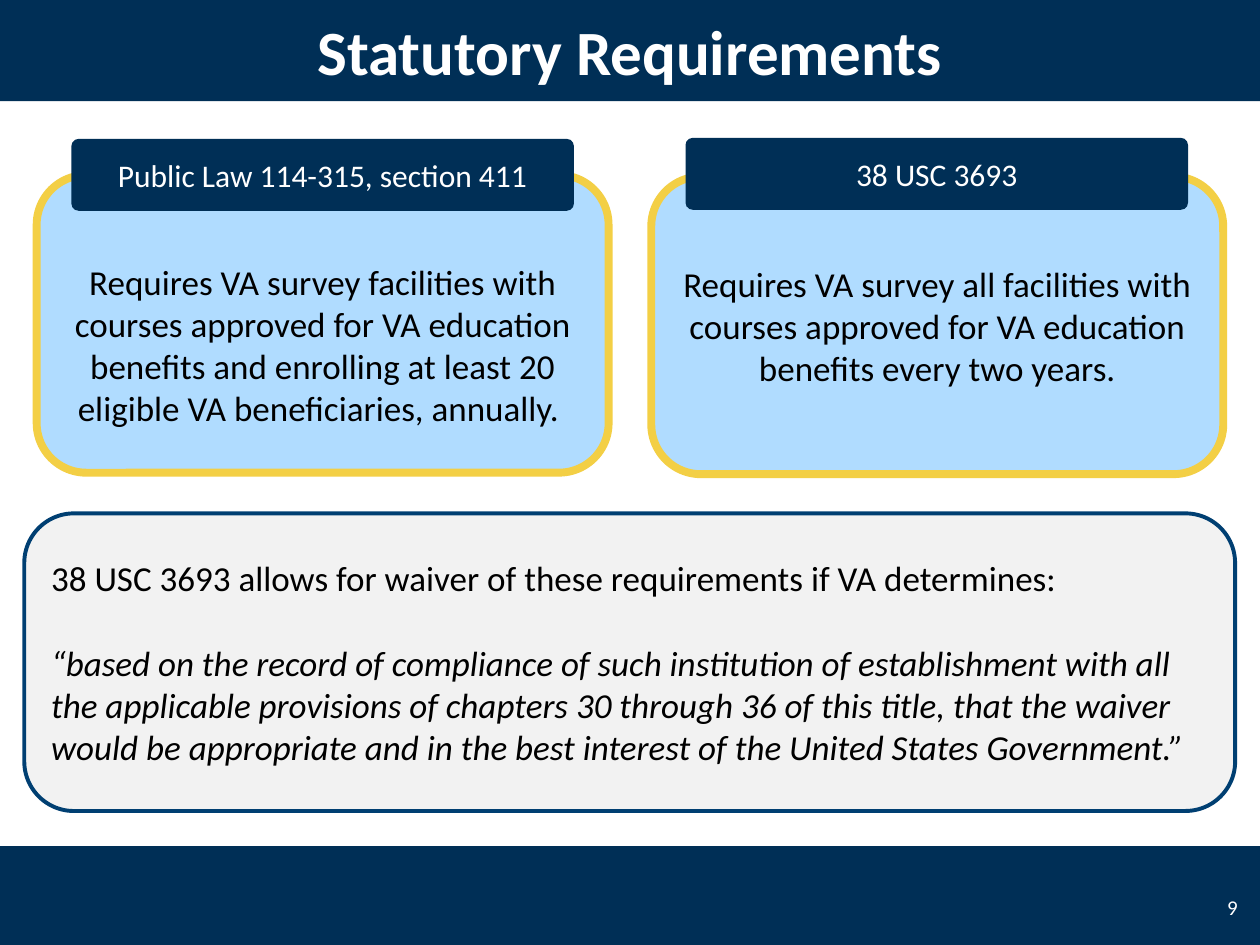
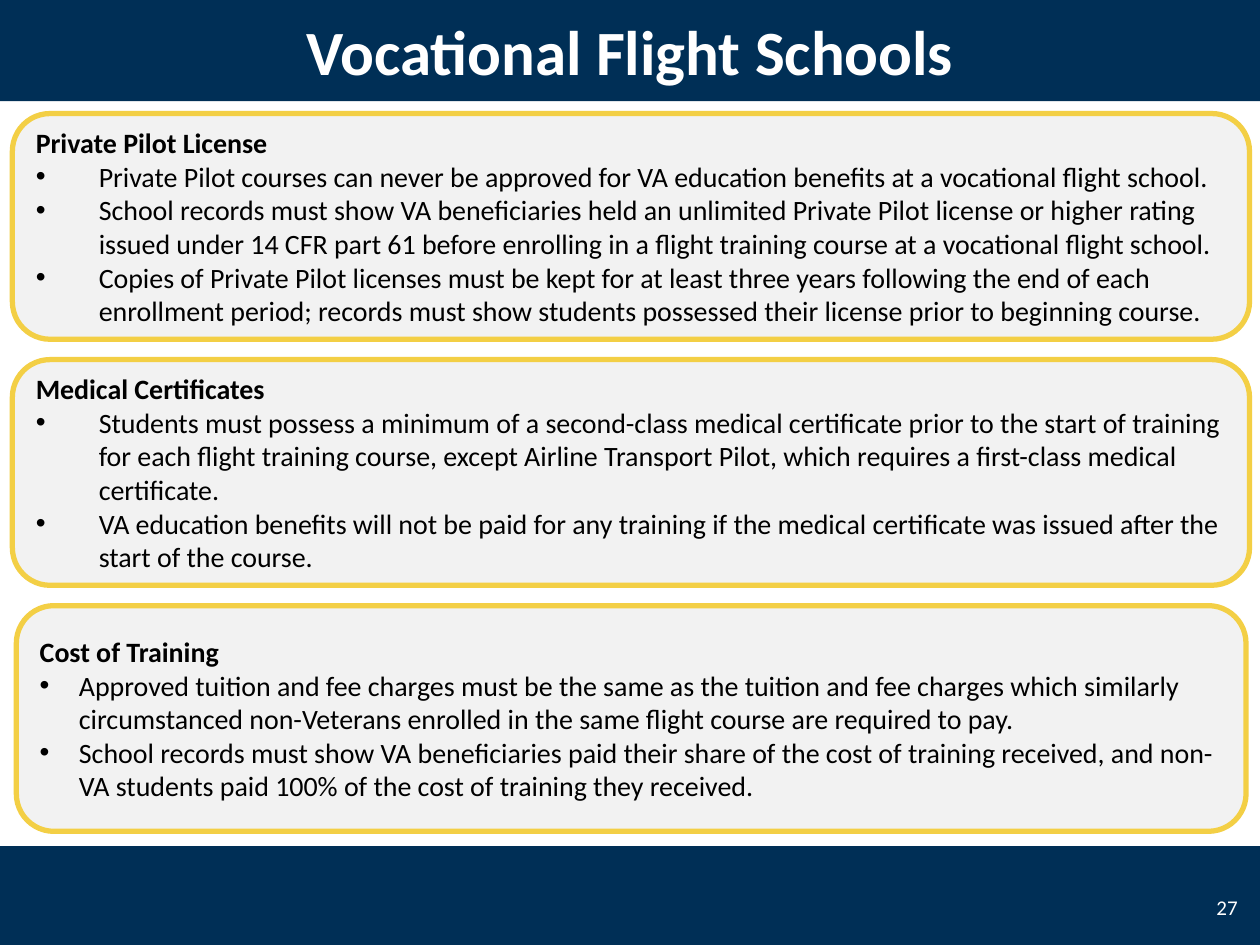
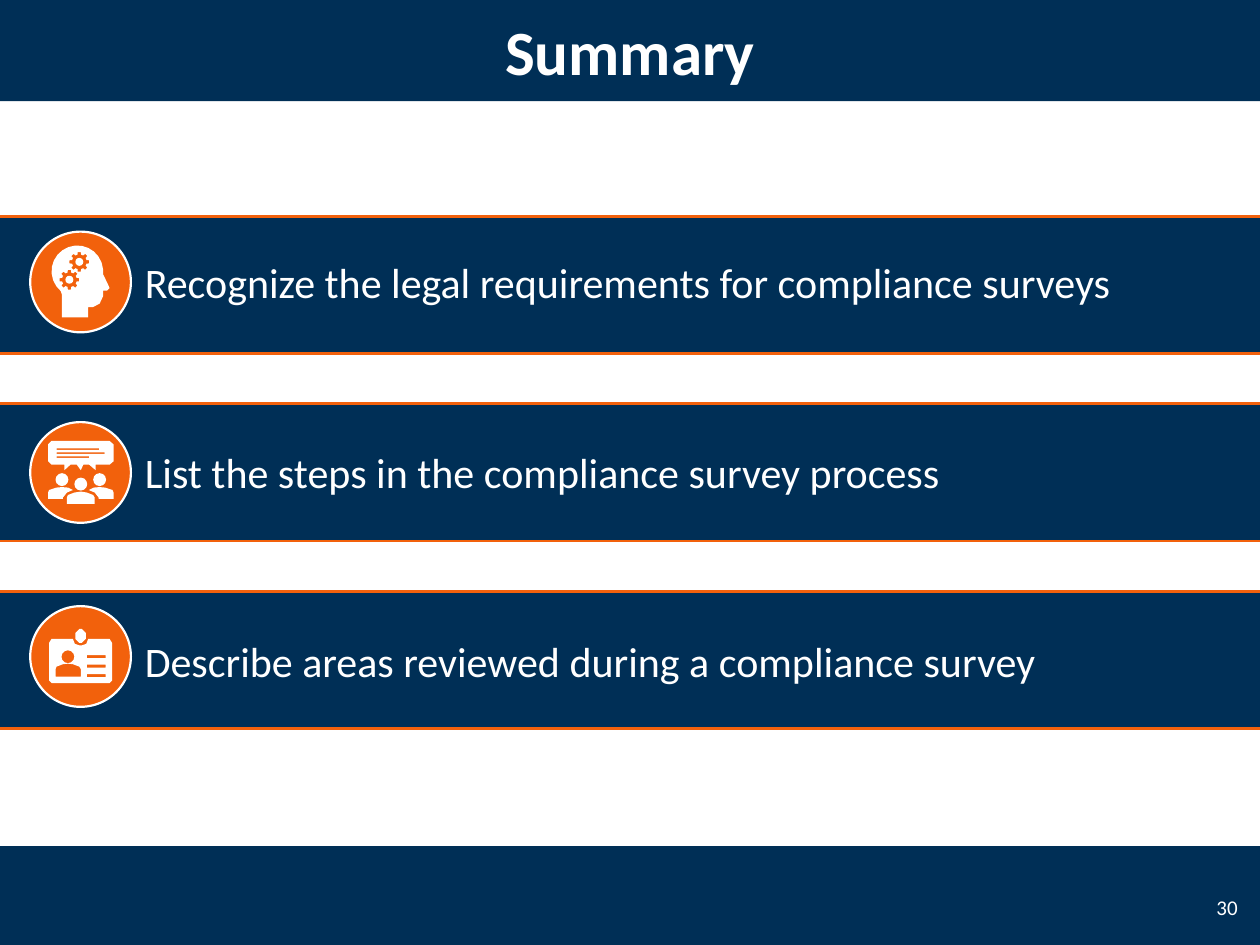
from dataclasses import dataclass
from math import cos, radians, sin
from typing import Any

from lxml.etree import SubElement
from pptx import Presentation
from pptx.dml.color import RGBColor
from pptx.enum.shapes import MSO_SHAPE
from pptx.enum.text import MSO_ANCHOR, PP_ALIGN
from pptx.oxml.ns import qn
from pptx.util import Cm, Pt

NAVY, BLUE, SKY = "002F56", "003F72", "B0DCFF"
GOLD, ORANGE = "F3CF45", "F2610C"
WHITE, BLACK, GRAY = "FFFFFF", "000000", "F2F2F2"
WIDE, HIGH = 25.4, 19.05
LEFT, DISC = 0.61, 2.03

RECT, ROUND = MSO_SHAPE.RECTANGLE, MSO_SHAPE.ROUNDED_RECTANGLE
OVAL = MSO_SHAPE.OVAL

BODY = {"name": "Calibri", "size": Pt(20), "bold": False, "italic": False}
HEAD = BODY | {"size": Pt(36), "bold": True}
LABEL = BODY | {"size": Pt(18)}
NOTE = BODY | {"size": Pt(16)}
POINT = BODY | {"size": Pt(24)}
PAGE = BODY | {"size": Pt(12)}

Path = list[tuple[float, float]]


@dataclass
class Box:
    x: float
    y: float
    w: float
    h: float

    def lengths(self) -> tuple:
        return Cm(self.x), Cm(self.y), Cm(self.w), Cm(self.h)


@dataclass
class Look:
    fill: str
    line: str | None = None
    width: float = 0
    kind: Any = RECT
    adj: float | None = None


@dataclass
class Para:
    text: str
    font: dict
    color: str = BLACK
    align: Any = PP_ALIGN.LEFT
    before: float = 0
    hang: float = 0


@dataclass
class Card:
    box: Box
    tab: Box
    label: str
    text: str
    drop: float


@dataclass
class Panel:
    x: float
    w: float
    hang: float
    head: str
    items: list[str]


@dataclass
class Goal:
    text: str
    width: float
    disc: float
    icon: list[Path]


def tint(code: str) -> RGBColor:
    return RGBColor.from_string(code)


def apply(target: Any, values: dict) -> None:
    for key, value in values.items():
        setattr(target, key, value)


def paint(shape: Any, look: Look) -> None:
    shape.shadow.inherit = False
    shape.fill.solid()
    shape.fill.fore_color.rgb = tint(look.fill)
    if look.line:
        shape.line.color.rgb = tint(look.line)
        shape.line.width = Pt(look.width)
    else:
        shape.line.fill.background()


def draw(slide: Any, box: Box, look: Look) -> Any:
    shape = slide.shapes.add_shape(look.kind, *box.lengths())
    paint(shape, look)
    if look.adj is not None:
        shape.adjustments[0] = look.adj
    return shape


def trace(slide: Any, x: float, y: float, icon: list[Path]) -> None:
    loops = [[(Cm(x + dx), Cm(y + dy)) for dx, dy in loop] for loop in icon]
    pen = slide.shapes.build_freeform(*loops[0][0])
    for spot, (first, *rest) in enumerate(loops):
        if spot:
            pen.move_to(*first)
        pen.add_line_segments(rest, close=True)
    paint(pen.convert_to_shape(), Look(WHITE))


def bullet(line: Any, hang: float) -> None:
    props = line._p.get_or_add_pPr()
    props.set("marL", str(Cm(hang)))
    props.set("indent", str(-Cm(hang)))
    SubElement(props, qn("a:buFont")).set("typeface", "Arial")
    SubElement(props, qn("a:buChar")).set("char", "•")


def write(shape: Any, paras: list[Para], drop: float = 0) -> None:
    frame = shape.text_frame
    apply(frame, {"word_wrap": True, "vertical_anchor": MSO_ANCHOR.MIDDLE,
                  "margin_top": Cm(0.13 + drop)})
    for spot, para in enumerate(paras):
        line = frame.add_paragraph() if spot else frame.paragraphs[0]
        line.alignment = para.align
        if para.before:
            line.space_before = Pt(para.before)
        if para.hang:
            bullet(line, para.hang)
        run = line.add_run()
        run.text = para.text
        apply(run.font, para.font)
        run.font.color.rgb = tint(para.color)


def label(slide: Any, box: Box, para: Para) -> None:
    write(slide.shapes.add_textbox(*box.lengths()), [para])


def start(deck: Any, title: str, page: int) -> Any:
    slide = deck.slides.add_slide(deck.slide_layouts[6])
    for top in (17.06, 0):
        draw(slide, Box(0, top, WIDE, 2.04), Look(NAVY))
    label(slide, Box(24.13, 17.78, 1.07, 1.02),
          Para(str(page), PAGE, WHITE, PP_ALIGN.RIGHT))
    label(slide, Box(1.27, 0, 22.86, 2.03),
          Para(title, HEAD, WHITE, PP_ALIGN.CENTER))
    return slide


def polar(x: float, y: float, far: float, turn: float) -> tuple[float, float]:
    return x + far * cos(radians(turn)), y + far * sin(radians(turn))


def ring(x: float, y: float, far: float) -> Path:
    return [polar(x, y, far, turn) for turn in range(0, 360, 30)]


def gear(x: float, y: float) -> Path:
    return [polar(x, y, far, turn + shift) for turn in range(0, 360, 45)
            for far, shift in ((0.15, -14), (0.2, -9), (0.2, 9), (0.15, 14))]


def bar(x: float, y: float, w: float, h: float) -> Path:
    return [(x, y), (x + w, y), (x + w, y + h), (x, y + h)]


CARDS = [
    Card(Box(13.13, 3.56, 11.53, 6), Box(13.82, 2.78, 10.13, 1.45),
         "38 USC 3693",
         "Requires VA survey all facilities with courses approved for VA "
         "education benefits every two years.", 0),
    Card(Box(0.74, 3.53, 11.53, 6), Box(1.44, 2.8, 10.13, 1.45),
         "Public Law 114-315, section 411",
         "Requires VA survey facilities with courses approved for VA education "
         "benefits and enrolling at least 20 eligible VA beneficiaries, "
         "annually. ", 0.83),
]

PANELS = [
    Panel(0.25, 24.94, 1.27, "Private Pilot License", [
        "Private Pilot courses can never be approved for VA education benefits "
        "at a vocational flight school.",
        "School records must show VA beneficiaries held an unlimited Private "
        "Pilot license or higher rating issued under 14 CFR part 61 before "
        "enrolling in a flight training course at a vocational flight school.",
        "Copies of Private Pilot licenses must be kept for at least three years "
        "following the end of each enrollment period; records must show "
        "students possessed their license prior to beginning course.",
    ]),
    Panel(0.25, 24.94, 1.27, "Medical Certificates", [
        "Students must possess a minimum of a second-class medical certificate "
        "prior to the start of training for each flight training course, except "
        "Airline Transport Pilot, which requires a first-class medical "
        "certificate.",
        "VA education benefits will not be paid for any training if the medical "
        "certificate was issued after the start of the course.",
    ]),
    Panel(0.33, 24.79, 0.79, "Cost of Training", [
        "Approved tuition and fee charges must be the same as the tuition and "
        "fee charges which similarly circumstanced non-Veterans enrolled in the "
        "same flight course are required to pay.",
        "School records must show VA beneficiaries paid their share of the cost "
        "of training received, and non-VA students paid 100% of the cost of "
        "training they received.",
    ]),
]

FACE = [(1.47, 0.86), (1.57, 1.07), (1.6, 1.14), (1.55, 1.19), (1.47, 1.19),
        (1.47, 1.3), (1.4, 1.45), (1.27, 1.52), (1.17, 1.52), (1.17, 1.73),
        (0.64, 1.73), (0.64, 1.27)]
SKULL = [polar(0.95, 0.8, 0.52, turn) for turn in range(130, 367, 15)]
MIND = [FACE + SKULL]
for hub in ((0.99, 0.61), (0.79, 0.97)):
    MIND += [gear(*hub), ring(*hub, 0.08)]

SPEECH = [(0.36, 0.45), (0.43, 0.38), (1.6, 0.38), (1.68, 0.45), (1.68, 0.79),
          (1.6, 0.86), (1.32, 0.86), (1.32, 0.97), (1.19, 0.86), (1.07, 0.86),
          (1.02, 0.97), (0.94, 0.86), (0.81, 0.86), (0.69, 0.97), (0.69, 0.86),
          (0.43, 0.86), (0.36, 0.79)]
SIDE = [(0.36, 1.55), (0.36, 1.42), (0.38, 1.37), (0.53, 1.32), (0.64, 1.31),
        (0.76, 1.32), (0.86, 1.37), (0.74, 1.42), (0.66, 1.52), (0.66, 1.55)]
FRONT = [(0.74, 1.65), (0.74, 1.52), (0.76, 1.47), (0.89, 1.42), (1.02, 1.4),
         (1.14, 1.42), (1.27, 1.47), (1.3, 1.52), (1.3, 1.65)]
GROUP = [
    SPEECH, SIDE, [(2.04 - x, y) for x, y in SIDE], FRONT,
    *(ring(x, y, 0.13) for x, y in ((0.64, 1.16), (1.4, 1.16), (1.02, 1.25))),
    *(bar(0.53, 0.53 + 0.08 * row, w, 0.03)
      for row, w in enumerate((0.86, 0.97, 0.66))),
]

CLIP = [(0.91, 0.54), (0.99, 0.46), (1.04, 0.46), (1.12, 0.54),
        (1.12, 0.66), (1.04, 0.74), (0.99, 0.74), (0.91, 0.66)]
PLATE = [(0.43, 0.66), (0.86, 0.66), (0.9, 0.76), (0.99, 0.79), (1.04, 0.79),
         (1.13, 0.76), (1.17, 0.66), (1.6, 0.66), (1.65, 0.74), (1.65, 1.5),
         (1.6, 1.55), (0.43, 1.55), (0.38, 1.5), (0.38, 0.74)]
BUST = [(0.51, 1.42), (0.51, 1.27), (0.53, 1.22), (0.66, 1.17), (0.76, 1.16),
        (0.86, 1.17), (0.99, 1.22), (1.02, 1.27), (1.02, 1.42)]
BADGE = [PLATE, CLIP, BUST, ring(0.76, 1.02, 0.13),
         *(bar(1.14, 0.99 + 0.19 * row, 0.38, 0.06) for row in range(3))]

GOALS = [
    Goal("Recognize the legal requirements for compliance surveys",
         23.04, 4.67, MIND),
    Goal("List the steps in the compliance survey process",
         20.65, 8.51, GROUP),
    Goal("Describe areas reviewed during a compliance survey",
         19.18, 12.22, BADGE),
]


def statutes(deck: Any) -> None:
    slide = start(deck, "Statutory Requirements", 9)
    for card in CARDS:
        shape = draw(slide, card.box, Look(SKY, GOLD, 4.5, ROUND))
        write(shape, [Para(card.text, BODY, align=PP_ALIGN.CENTER)], card.drop)
    for card in CARDS:
        shape = draw(slide, card.tab, Look(NAVY, kind=ROUND, adj=0.1))
        write(shape, [Para(card.label, LABEL, WHITE, PP_ALIGN.CENTER)])
    shape = draw(slide, Box(0.49, 10.35, 24.41, 6), Look(GRAY, BLUE, 2.25, ROUND))
    write(shape, [
        Para("38 USC 3693 allows for waiver of these requirements if VA "
             "determines:", BODY),
        Para("“based on the record of compliance of such institution of "
             "establishment with all the applicable provisions of chapters 30 "
             "through 36 of this title, that the waiver would be appropriate "
             "and in the best interest of the United States Government.”",
             BODY | {"italic": True}, before=24.4),
    ])


def flight(deck: Any) -> None:
    slide = start(deck, "Vocational Flight Schools", 27)
    for row, panel in enumerate(PANELS):
        box = Box(panel.x, 2.29 + 4.96 * row, panel.w, 4.55)
        shape = draw(slide, box, Look(GRAY, GOLD, 3, ROUND))
        items = [Para(item, NOTE, hang=panel.hang) for item in panel.items]
        write(shape, [Para(panel.head, NOTE | {"bold": True}), *items])


def summary(deck: Any) -> None:
    slide = start(deck, "Summary", 30)
    for row, goal in enumerate(GOALS):
        draw(slide, Box(-0.74, 4.36 + 3.78 * row, 26.77, 2.77),
             Look(NAVY, ORANGE, 1.5))
        draw(slide, Box(LEFT, goal.disc, DISC, DISC),
             Look(ORANGE, WHITE, 1.25, OVAL))
        trace(slide, LEFT, goal.disc, goal.icon)
    for row, goal in enumerate(GOALS):
        label(slide, Box(2.67, 5.05 + 3.82 * row, goal.width, 1.27),
              Para(goal.text, POINT, WHITE))


def main() -> None:
    deck = Presentation()
    apply(deck, {"slide_width": Cm(WIDE), "slide_height": Cm(HIGH)})
    for build in (statutes, flight, summary):
        build(deck)
    deck.save("out.pptx")


if __name__ == "__main__":
    main()
